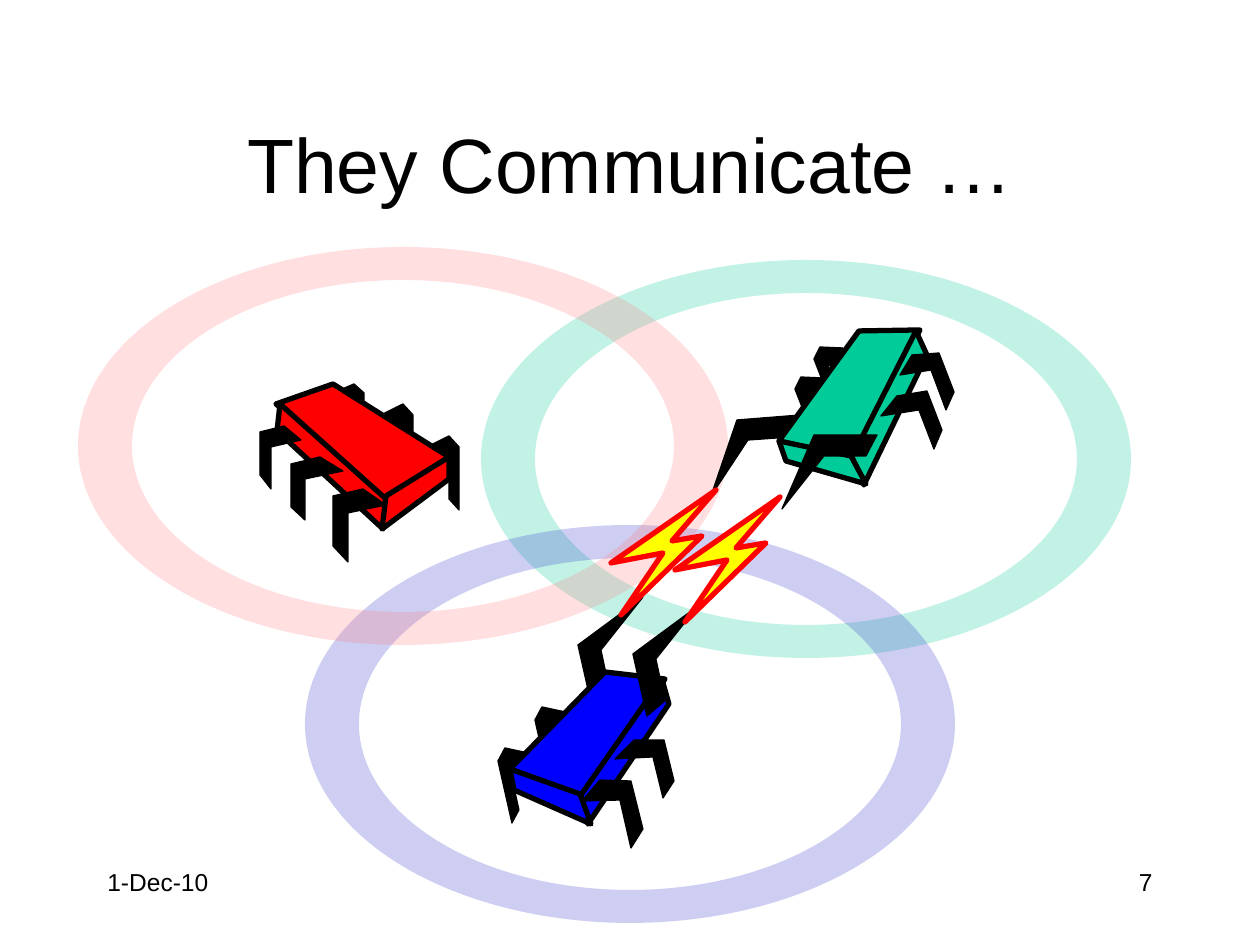
"""Build a slide of three six-legged robots that communicate across overlapping ranges."""
from pptx import Presentation
from pptx.dml.color import RGBColor
from pptx.enum.text import MSO_ANCHOR, PP_ALIGN
from pptx.oxml.ns import qn
from pptx.oxml.xmlchemy import OxmlElement
from pptx.util import Pt

PX = 914400 / 126
WIDTH, HEIGHT = 1260, 945

THEME = {
    "font": "Arial", "title": 44, "footer": 14, "thin": 0.75, "thick": 3, "range_alpha": 24,
    "black": "000000", "red": "FF0000", "blue": "0000FF", "green": "00CC99", "yellow": "FFFF00",
    "green_range": "00CC99", "blue_range": "3333CC", "red_range": "FF7C80",
}

TEXTS = [
    ("They Communicate …", (95, 84, 1071, 158), "title", PP_ALIGN.CENTER, MSO_ANCHOR.MIDDLE),
    ("1-Dec-10", (95, 861, 262, 63), "footer", PP_ALIGN.LEFT, MSO_ANCHOR.TOP),
    ("7", (903, 861, 262, 63), "footer", PP_ALIGN.RIGHT, MSO_ANCHOR.TOP),
]

RANGES = [("green_range", (806, 459)), ("blue_range", (630, 724)), ("red_range", (403, 446))]
RADII = [(325, 199), (271, 166)]
QUARTER = 90 * 60000

RED_BACK_LEG = [(427, 447), (449, 436), (459, 447), (459, 510), (449, 499), (449, 457), (427, 467)]
BLUE_FRONT_LEG = [(592, 707), (610, 692), (601, 650), (643, 597), (578, 645)]
BLUE_BACK_LEG = [(528, 753), (505, 748), (498, 761), (512, 823), (519, 810), (510, 769), (533, 775)]
GREEN_BACK_LEG = [(843, 348), (820, 347), (814, 359), (837, 418), (843, 404), (828, 365), (851, 368)]
BOLT = [(621, 615), (663, 553), (611, 563), (716, 490), (672, 541), (702, 536)]
BOLT_OFFSETS = [(0, 0), (64, 7)]


def shift(points, dx, dy):
    return [(x + dx, y + dy) for x, y in points]


ROBOTS = [
    {
        "color": "red",
        "far_legs": [
            RED_BACK_LEG,
            shift(RED_BACK_LEG, -46, -32),
            [(333, 393), (354, 384), (364, 393), (364, 447), (354, 437), (354, 402), (333, 411)],
        ],
        "body": [
            [(333, 384), (449, 457), (383, 500), (276, 404)],
            [(280, 404), (386, 499), (383, 529), (277, 431)],
            [(449, 457), (449, 479), (382, 529), (386, 496)],
        ],
        "near_legs": [
            [(363, 489), (386, 505), (348, 513), (348, 562), (333, 546), (333, 496)],
            [(320, 457), (343, 471), (305, 479), (305, 520), (291, 507), (291, 464)],
            [(284, 426), (301, 440), (271, 447), (271, 489), (260, 475), (260, 432)],
        ],
    },
    {
        "color": "blue",
        "far_legs": [BLUE_FRONT_LEG, BLUE_BACK_LEG, shift(BLUE_BACK_LEG, 37, -41)],
        "body": [
            [(605, 672), (510, 769), (582, 796), (665, 679)],
            [(662, 679), (581, 795), (588, 824), (669, 704)],
            [(510, 769), (514, 790), (591, 824), (580, 794)],
        ],
        "near_legs": [
            [(600, 780), (582, 801), (620, 800), (631, 848), (643, 829), (631, 781)],
            [(634, 740), (615, 759), (653, 757), (663, 798), (674, 781), (664, 740)],
            shift(BLUE_FRONT_LEG, 55, 9),
        ],
    },
    {
        "color": "green",
        "far_legs": [
            [(800, 415), (791, 437), (748, 440), (711, 496), (737, 420)],
            GREEN_BACK_LEG,
            shift(GREEN_BACK_LEG, -19, 30),
        ],
        "body": [
            [(859, 331), (779, 441), (854, 459), (920, 330)],
            [(916, 331), (852, 457), (864, 485), (927, 355)],
            [(779, 441), (786, 461), (866, 484), (851, 456)],
        ],
        "near_legs": [
            [(912, 355), (900, 375), (931, 370), (946, 410), (954, 392), (939, 353)],
            [(897, 396), (881, 416), (919, 410), (934, 449), (942, 430), (927, 391)],
            [(877, 435), (866, 456), (824, 456), (782, 509), (814, 435)],
        ],
    },
]


def emu(px):
    return round(px * PX)


def color(name):
    return RGBColor.from_string(THEME[name])


def add_outline(s, contours, fill, line=None, weight="thin"):
    first, *rest = contours
    builder = s.shapes.build_freeform(*first[0], scale=PX)
    builder.add_line_segments(first[1:], close=True)
    for contour in rest:
        builder.move_to(*contour[0])
        builder.add_line_segments(contour[1:], close=True)
    sp = builder.convert_to_shape()
    sp.shadow.inherit = False
    sp.fill.solid()
    sp.fill.fore_color.rgb = color(fill)
    if line:
        sp.line.color.rgb = color(line)
        sp.line.width = Pt(THEME[weight])
        sp.element.spPr.find(qn("a:ln")).append(OxmlElement("a:round"))
    else:
        sp.line.fill.background()
    return sp


def quarter_points(center, radii):
    (x, y), (rx, ry) = center, radii
    left = (x - rx, y)
    return [left, (x, y - ry), (x + rx, y), (x, y + ry), left]


def add_range(s, fill, center):
    sp = add_outline(s, [quarter_points(center, radii) for radii in RADII], fill)
    segments = list(sp.element.spPr.iter(qn("a:lnTo")))
    for i, segment in enumerate(segments):
        ring, quarter = divmod(i, 4)
        arc = OxmlElement("a:arcTo")
        values = (*RADII[ring], (quarter + 2) % 4 * QUARTER, QUARTER)
        for name, value in zip(("wR", "hR", "stAng", "swAng"), values):
            arc.set(name, str(value))
        segment.getparent().replace(segment, arc)
    alpha = OxmlElement("a:alpha")
    alpha.set("val", str(THEME["range_alpha"] * 1000))
    sp.element.spPr.find(qn("a:solidFill"))[0].append(alpha)


def add_robot(s, robot):
    layers = [("far_legs", "black", "thin"), ("body", robot["color"], "thick"), ("near_legs", "black", "thin")]
    parts = [add_outline(s, [points], fill, "black", weight)
             for part, fill, weight in layers for points in robot[part]]
    s.shapes.add_group_shape(parts)


def add_text(s, text, box, size, align, anchor):
    tf = s.shapes.add_textbox(*map(emu, box)).text_frame
    tf.word_wrap = True
    tf.vertical_anchor = anchor
    p = tf.paragraphs[0]
    p.text = text
    p.alignment = align
    p.font.name = THEME["font"]
    p.font.size = Pt(THEME[size])
    p.font.color.rgb = color("black")


def main():
    prs = Presentation()
    prs.slide_width, prs.slide_height = emu(WIDTH), emu(HEIGHT)
    s = prs.slides.add_slide(prs.slide_layouts[6])
    for fill, center in RANGES:
        add_range(s, fill, center)
    for robot in ROBOTS:
        add_robot(s, robot)
    for offset in BOLT_OFFSETS:
        add_outline(s, [shift(BOLT, *offset)], "yellow", "red", "thick")
    for text in TEXTS:
        add_text(s, *text)
    prs.save("out.pptx")


if __name__ == "__main__":
    main()
